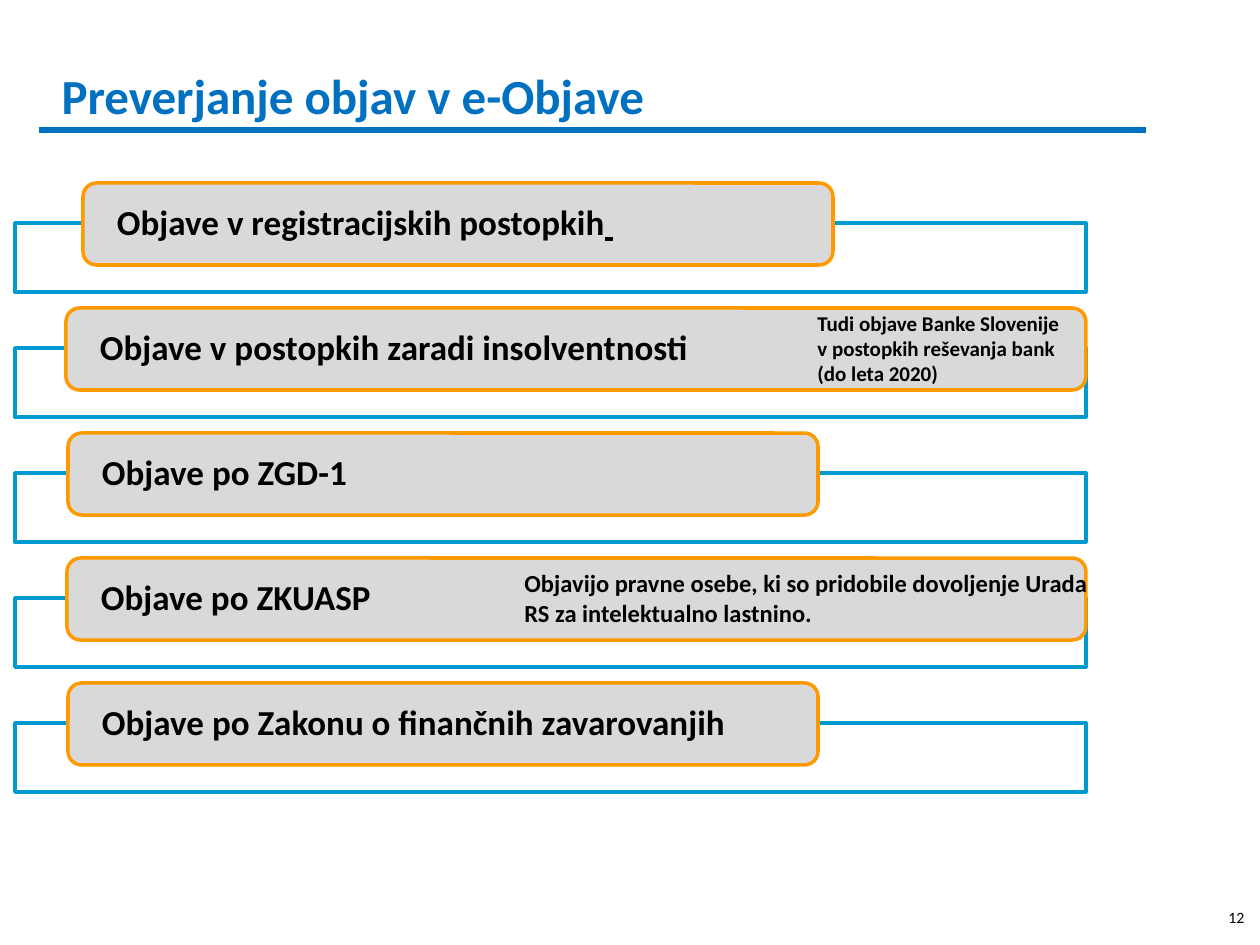
import pptx
import pptx.dml.color
import pptx.enum.shapes
import pptx.enum.text
import pptx.oxml.ns
import pptx.util
from lxml import etree

RGBColor = pptx.dml.color.RGBColor
MSO_SHAPE = pptx.enum.shapes.MSO_SHAPE
PP_ALIGN = pptx.enum.text.PP_ALIGN
MSO_ANCHOR = pptx.enum.text.MSO_ANCHOR

BLUE = RGBColor(0x00, 0x70, 0xC0)
FRAME_BLUE = RGBColor(0x00, 0x9A, 0xD0)
ORANGE = RGBColor(0xFF, 0x99, 0x00)
GREY = RGBColor(0xD9, 0xD9, 0xD9)
WHITE = RGBColor(0xFF, 0xFF, 0xFF)
BLACK = RGBColor(0x00, 0x00, 0x00)

FONT = "Calibri"
PX_PER_INCH = 126
ROW_PITCH = 125
FRAME_TOP = 223
PILL_TOP = 183

ROWS = [
    ("Objave v registracijskih postopkih", 83, 750),
    ("Objave v postopkih zaradi insolventnosti", 66, 1020),
    ("Objave po ZGD-1", 68, 750),
    ("Objave po ZKUASP", 67, 1019),
    ("Objave po Zakonu o finančnih zavarovanjih", 68, 750),
]


def px(n):
    return round(n * 914400 / PX_PER_INCH)


def box(*lengths):
    return [px(n) for n in lengths]


def add_run(p, text, size, color=BLACK, bold=True):
    r = p.add_run()
    r.text = text
    r.font.name = FONT
    r.font.size = pptx.util.Pt(size)
    r.font.bold = bold
    r.font.color.rgb = color
    return r


def add_title(slide, text):
    sp = slide.shapes.title
    sp.left, sp.top, sp.width, sp.height = box(49, 55, 1096, 100)
    tf = sp.text_frame
    tf.vertical_anchor = MSO_ANCHOR.TOP
    tf.margin_top = px(10)
    p = tf.paragraphs[0]
    p.alignment = PP_ALIGN.LEFT
    add_run(p, text, 28, BLUE)


def add_rule(slide):
    x1, y1, x2, y2 = box(39, 130, 1146, 130)
    line = slide.shapes.add_connector(
        pptx.enum.shapes.MSO_CONNECTOR.STRAIGHT, x1, y1, x2, y2)
    line.line.color.rgb = BLUE
    line.line.width = pptx.util.Pt(3)
    etree.SubElement(line._element.spPr, pptx.oxml.ns.qn("a:effectLst"))


def add_block(slide, kind, rect, fill, line):
    sp = slide.shapes.add_shape(kind, *box(*rect))
    sp.shadow.inherit = False
    sp.fill.solid()
    sp.fill.fore_color.rgb = fill
    sp.line.color.rgb = line
    sp.line.width = pptx.util.Pt(2)
    return sp


def add_row(slide, index, text, left, width):
    offset = index * ROW_PITCH
    add_block(slide, MSO_SHAPE.RECTANGLE,
              (15, FRAME_TOP + offset, 1071, 69), WHITE, FRAME_BLUE)
    pill = add_block(slide, MSO_SHAPE.ROUNDED_RECTANGLE,
                     (left, PILL_TOP + offset, width, 82), GREY, ORANGE)
    tf = pill.text_frame
    tf.word_wrap = True
    tf.vertical_anchor = MSO_ANCHOR.MIDDLE
    tf.margin_left = tf.margin_right = px(30)
    tf.margin_top = tf.margin_bottom = 0
    p = tf.paragraphs[0]
    p.alignment = PP_ALIGN.LEFT
    p.line_spacing = 0.9
    add_run(p, text, 20)
    return p


def add_note(slide, rect, text, size, bold=True):
    tf = slide.shapes.add_textbox(*box(*rect)).text_frame
    tf.word_wrap = True
    add_run(tf.paragraphs[0], text, size, bold=bold)


def main():
    prs = pptx.Presentation()
    prs.slide_width, prs.slide_height = box(1260, 945)
    slide = prs.slides.add_slide(prs.slide_layouts[5])
    add_title(slide, "Preverjanje objav v e-Objave")
    paragraphs = [add_row(slide, i, *row) for i, row in enumerate(ROWS)]
    add_run(paragraphs[0], " ", 20).font.underline = True
    add_note(slide, (512, 562, 591, 72),
             "Objavijo pravne osebe, ki so pridobile dovoljenje Urada RS "
             "za intelektualno lastnino.", 14)
    add_rule(slide)
    add_note(slide, (1216, 902, 44, 43), "12", 9, bold=False)
    add_note(slide, (805, 304, 280, 89),
             "Tudi objave Banke Slovenije v postopkih reševanja bank "
             "(do leta 2020)", 12)
    prs.save("out.pptx")


if __name__ == "__main__":
    main()
